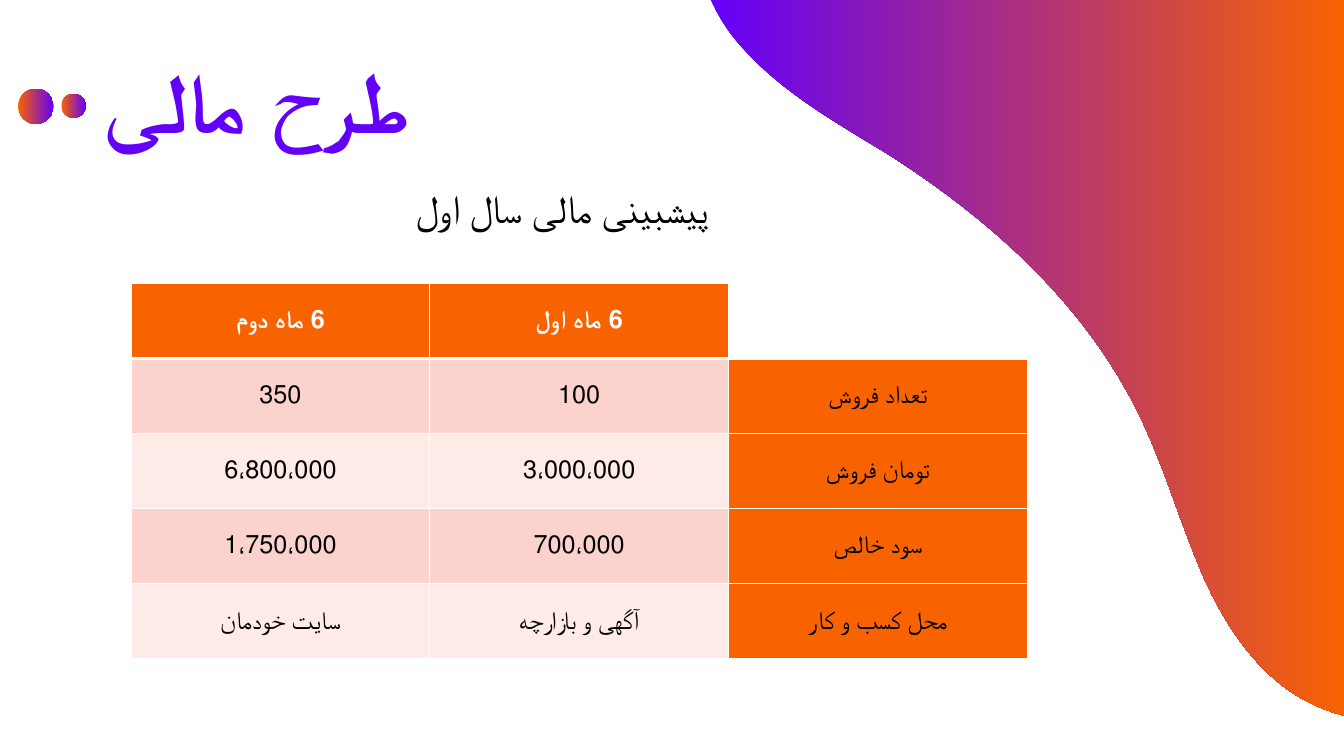
"""Build the financial plan slide with its first-year forecast table."""
from dataclasses import dataclass

from lxml import etree
from pptx import Presentation
from pptx import util as u
from pptx.dml import color as dml_color
from pptx.enum import shapes, text
from pptx.oxml import ns

COLORS = {
    "orange": "F86300",
    "purple": "6300F8",
    "white": "FFFFFF",
    "black": "000000",
    "dark_band": "FCD3CC",
    "light_band": "FEEAE7",
}
BODY_FONT = "Montserrat"
WAVE_START = (7.04, -0.02)
WAVE_CURVES = [
    ((7.12, 0.16), (7.23, 0.33), (7.36, 0.47)),
    ((7.77, 0.93), (8.32, 1.23), (8.84, 1.55)),
    ((9.85, 2.2), (10.79, 3.04), (11.32, 4.16)),
    ((11.57, 4.69), (11.73, 5.27), (11.97, 5.8)),
    ((12.22, 6.33), (12.59, 6.83), (13.12, 7.03)),
    ((13.19, 7.06), (13.26, 7.08), (13.33, 7.1)),
]
WAVE_CORNER = (13.33, -0.02)
CURVE_STEPS = 16
FORECAST = [
    ("6 ماه دوم", "6 ماه اول", ""),
    ("350", "100", "تعداد فروش"),
    ("6،800،000", "3،000،000", "تومان فروش"),
    ("1،750،000", "700،000", "سود خالص"),
    ("سایت خودمان", "آگهی و بازارچه", "محل کسب و کار"),
]


@dataclass(frozen=True)
class Dot:
    left: float
    top: float
    diameter: float


@dataclass(frozen=True)
class TextStyle:
    size: int
    color: str
    font: str = BODY_FONT
    bold: bool = False
    centered_rtl: bool = True
    line_spacing: float = 1.0


@dataclass(frozen=True)
class Label:
    content: str
    box: tuple[float, float, float, float]
    anchor: text.MSO_ANCHOR
    style: TextStyle


DOTS = [Dot(0.61, 0.93, 0.24), Dot(0.18, 0.88, 0.35)]
LABELS = [
    Label("طرح مالی", (0.93, 0.33, 7.65, 1.45), text.MSO_ANCHOR.MIDDLE,
          TextStyle(60, "purple", "Manrope", True, False, 0.9)),
    Label("پیشبینی مالی سال اول", (3.75, 1.78, 3.65, 0.57), text.MSO_ANCHOR.TOP,
          TextStyle(28, "black")),
]
HEADER_STYLE = TextStyle(18, "white", bold=True)
CELL_STYLE = TextStyle(18, "black")


def rgb(name: str) -> dml_color.RGBColor:
    return dml_color.RGBColor.from_string(COLORS[name])


def paint_gradient(shape, start: str, end: str) -> None:
    shape.shadow.inherit = False
    shape.line.fill.background()
    shape.fill.gradient()
    shape.fill.gradient_angle = 0
    for stop, name in zip(shape.fill.gradient_stops, (start, end)):
        stop.color.rgb = rgb(name)


def curve_points(start: tuple, curve: tuple) -> list[tuple]:
    points = []
    for step in range(1, CURVE_STEPS + 1):
        t = step / CURVE_STEPS
        weights = ((1 - t) ** 3, 3 * t * (1 - t) ** 2, 3 * t**2 * (1 - t), t**3)
        controls = (start, *curve)
        points.append(tuple(
            sum(weight * point[axis] for weight, point in zip(weights, controls))
            for axis in (0, 1)
        ))
    return points


def add_wave(slide) -> None:
    points = [WAVE_START]
    for curve in WAVE_CURVES:
        points += curve_points(points[-1], curve)
    points.append(WAVE_CORNER)
    outline = [(u.Inches(x), u.Inches(y)) for x, y in points]
    builder = slide.shapes.build_freeform(*outline[0])
    builder.add_line_segments(outline[1:], close=True)
    paint_gradient(builder.convert_to_shape(), "purple", "orange")


def add_dot(slide, dot: Dot) -> None:
    box = map(u.Inches, (dot.left, dot.top, dot.diameter, dot.diameter))
    shape = slide.shapes.add_shape(shapes.MSO_SHAPE.OVAL, *box)
    paint_gradient(shape, "orange", "purple")


def write(text_frame, content: str, style: TextStyle) -> None:
    paragraph = text_frame.paragraphs[0]
    paragraph.text = content
    paragraph.line_spacing = style.line_spacing
    paragraph.font.name = style.font
    paragraph.font.size = u.Pt(style.size)
    paragraph.font.bold = style.bold
    paragraph.font.color.rgb = rgb(style.color)
    if style.centered_rtl:
        paragraph.alignment = text.PP_ALIGN.CENTER
        paragraph._p.get_or_add_pPr().set("rtl", "1")


def add_label(slide, label: Label) -> None:
    text_frame = slide.shapes.add_textbox(*map(u.Inches, label.box)).text_frame
    text_frame.word_wrap = True
    text_frame.vertical_anchor = label.anchor
    write(text_frame, label.content, label.style)


def add_borders(cell, bottom_width: int) -> None:
    properties = cell._tc.get_or_add_tcPr()
    for side, width in (("L", 1), ("R", 1), ("T", 1), ("B", bottom_width)):
        line = etree.SubElement(properties, ns.qn(f"a:ln{side}"), w=str(u.Pt(width)))
        fill = etree.SubElement(line, ns.qn("a:solidFill"))
        etree.SubElement(fill, ns.qn("a:srgbClr"), val=COLORS["white"])


def cell_color(row: int, column: int) -> str:
    if row == 0 or column == 2:
        return "orange"
    return "dark_band" if row % 2 else "light_band"


def add_forecast(slide) -> None:
    box = map(u.Inches, (1.3, 2.81, 8.89, 3.73))
    table = slide.shapes.add_table(len(FORECAST), len(FORECAST[0]), *box).table
    for row, values in enumerate(FORECAST):
        for column, value in enumerate(values):
            cell = table.cell(row, column)
            add_borders(cell, 1 if row else 3)
            if not value:
                cell.fill.background()
                continue
            cell.fill.solid()
            cell.fill.fore_color.rgb = rgb(cell_color(row, column))
            cell.vertical_anchor = text.MSO_ANCHOR.MIDDLE
            write(cell.text_frame, value, CELL_STYLE if row else HEADER_STYLE)


def main() -> None:
    presentation = Presentation()
    presentation.slide_width = u.Inches(13.33)
    presentation.slide_height = u.Inches(7.5)
    slide = presentation.slides.add_slide(presentation.slide_layouts[6])
    add_wave(slide)
    for dot in DOTS:
        add_dot(slide, dot)
    for label in LABELS:
        add_label(slide, label)
    add_forecast(slide)
    presentation.save("out.pptx")


if __name__ == "__main__":
    main()
